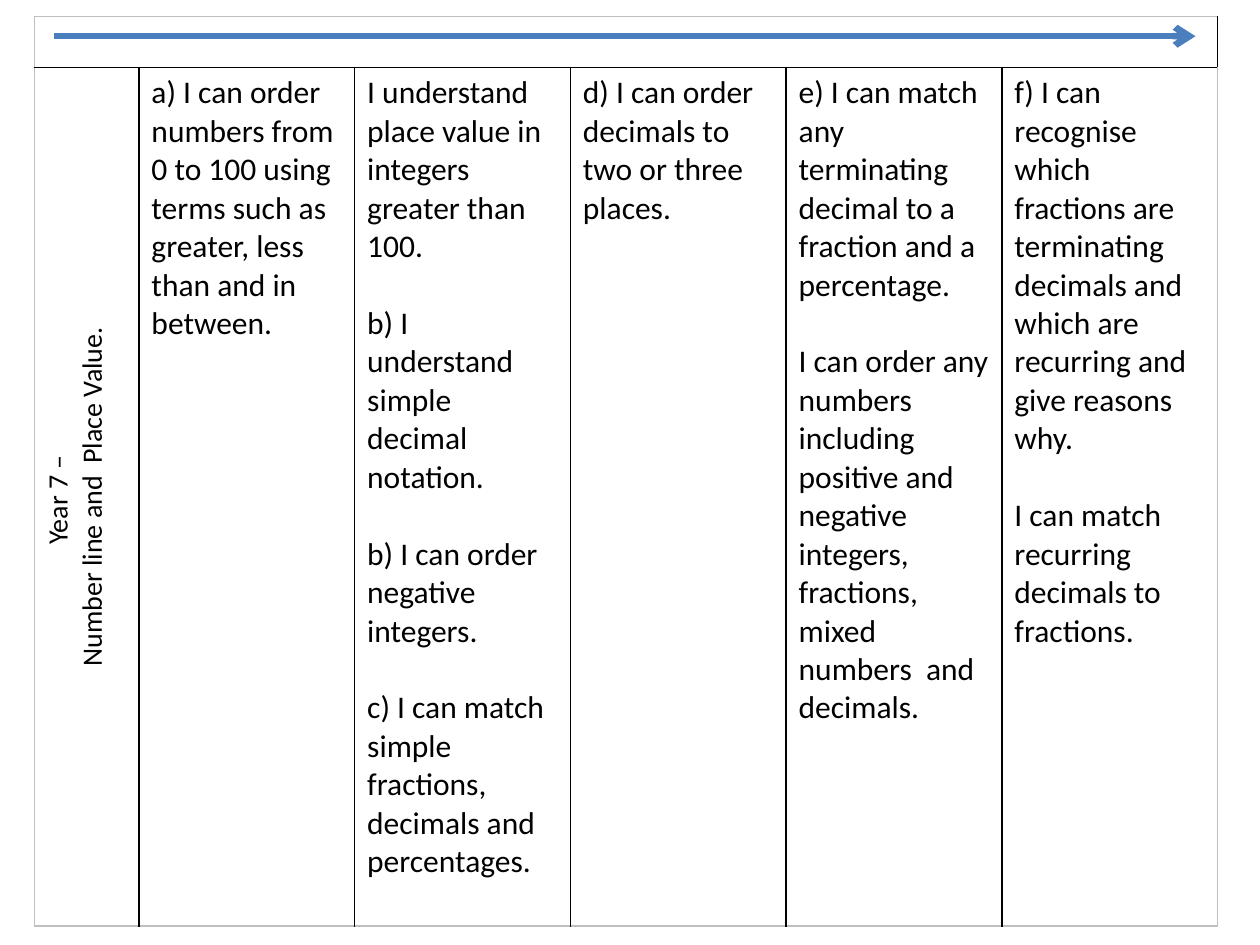
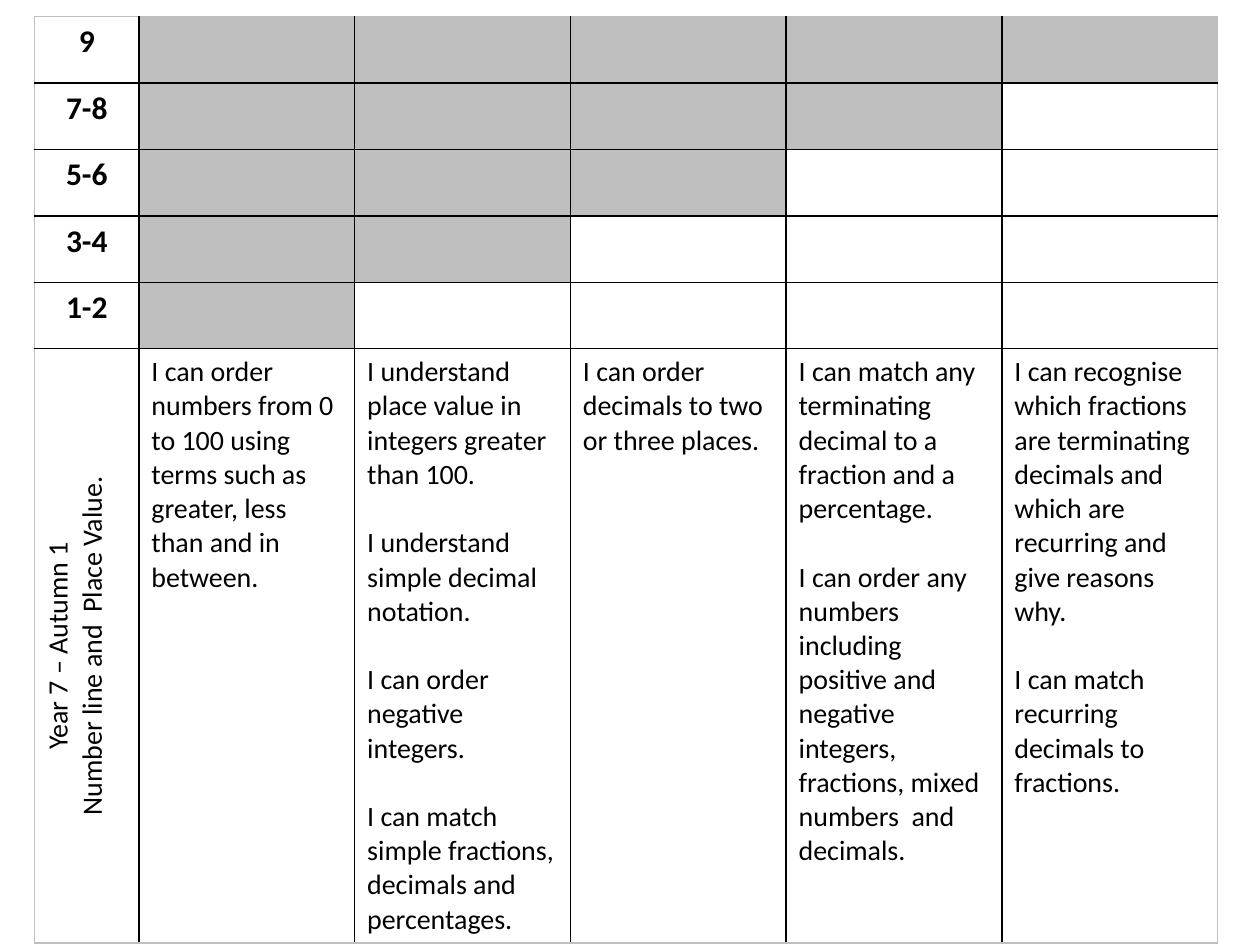
from lxml.etree import SubElement, fromstring
from pptx import Presentation
from pptx.dml.color import RGBColor
from pptx.enum.shapes import MSO_CONNECTOR
from pptx.enum.text import PP_ALIGN
from pptx.oxml.ns import nsdecls, qn
from pptx.util import Cm, Pt

INK, GREY, BLUE = "000000", "BFBFBF", "4B7EBC"
WIDE = [2.1] + [4.35] * 5
TOPIC = "Number line and  Place Value."
AIMS = [
    [("a) ", "I can order numbers from 0 to 100 using terms such as greater, less than and in between.")],
    [("", "I understand place value in integers greater than 100."),
     ("b) ", "I understand simple decimal notation."),
     ("b) ", "I can order negative integers."),
     ("c) ", "I can match simple fractions, decimals and percentages.")],
    [("d) ", "I can order decimals to two or three places.")],
    [("e) ", "I can match any  terminating decimal to a fraction and a percentage."),
     ("", "I can order any numbers including positive and negative integers, "
          "fractions, mixed numbers  and decimals.")],
    [("f) ", "I can recognise which fractions are terminating decimals "
             "and which are recurring and give reasons why."),
     ("", "I can match recurring decimals to fractions.")],
]
PAGES = [
    {"levels": [], "high": [1.03, 17.31], "term": "Year 7 – ", "size": 18, "marks": True},
    {"levels": ["9", "7-8", "5-6", "3-4", "1-2"], "high": [1.34] * 5 + [11.97],
     "term": "Year 7 – Autumn 1", "size": 16, "marks": False},
]


def hue(code):
    return RGBColor.from_string(code)


def write(cell, lines, size, gap=0, bold=False, align=PP_ALIGN.LEFT):
    form = {"name": "Calibri", "size": Pt(size), "bold": bold}
    frame = cell.text_frame
    for num, line in enumerate(lines):
        para = frame.add_paragraph() if num else frame.paragraphs[0]
        para.alignment = align
        if num and gap:
            para.space_before = Pt(gap)
        run = para.add_run()
        run.text = line
        for key, val in form.items():
            setattr(run.font, key, val)
        run.font.color.rgb = hue(INK)


deck = Presentation()
deck.slide_width, deck.slide_height = Cm(25.4), Cm(19.05)

for page in PAGES:
    slide = deck.slides.add_slide(deck.slide_layouts[6])
    high, size = page["high"], page["size"]
    last = len(high) - 1
    grid = slide.shapes.add_table(len(high), len(WIDE), Cm(0.7), Cm(0.33),
                                  Cm(sum(WIDE)), Cm(sum(high))).table
    grid.first_row = grid.horz_banding = False
    for col, wide in zip(grid.columns, WIDE):
        col.width = Cm(wide)
    for row, tall in zip(grid.rows, high):
        row.height = Cm(tall)

    for r in range(len(high)):
        for c in range(len(WIDE)):
            cell = grid.cell(r, c)
            if page["levels"] and r < last and 0 < c < len(WIDE) - r:
                cell.fill.solid()
                cell.fill.fore_color.rgb = hue(GREY)
            else:
                cell.fill.background()
            props = cell._tc.get_or_add_tcPr()
            edges = {"lnL": c == 0, "lnR": c == len(WIDE) - 1,
                     "lnT": r == 0, "lnB": r == last}
            for spot, (tag, outer) in enumerate(edges.items()):
                props.insert(spot, fromstring(
                    f'<a:{tag} {nsdecls("a")} w="12700"><a:solidFill>'
                    f'<a:srgbClr val="{GREY if outer else INK}"/></a:solidFill></a:{tag}>'))

    for r, level in enumerate(page["levels"]):
        write(grid.cell(r, 0), [level], 18, bold=True, align=PP_ALIGN.CENTER)
    name = grid.cell(last, 0)
    name._tc.get_or_add_tcPr().set("vert", "vert270")
    write(name, [page["term"], TOPIC], 16, align=PP_ALIGN.CENTER)
    for c, goals in enumerate(AIMS, 1):
        lines = [mark + goal if page["marks"] else goal for mark, goal in goals]
        write(grid.cell(last, c), lines, size, gap=size * 1.22)

    if not page["levels"]:
        grid.cell(0, 0).merge(grid.cell(0, len(WIDE) - 1))
        arrow = slide.shapes.add_connector(MSO_CONNECTOR.STRAIGHT,
                                           Cm(1.09), Cm(0.73), Cm(24.1), Cm(0.73))
        arrow.line.color.rgb = hue(BLUE)
        arrow.line.width = Pt(3.75)
        SubElement(arrow.line._get_or_add_ln(), qn("a:tailEnd"), type="arrow")
        SubElement(arrow._element.spPr, qn("a:effectLst"))

deck.save("out.pptx")
